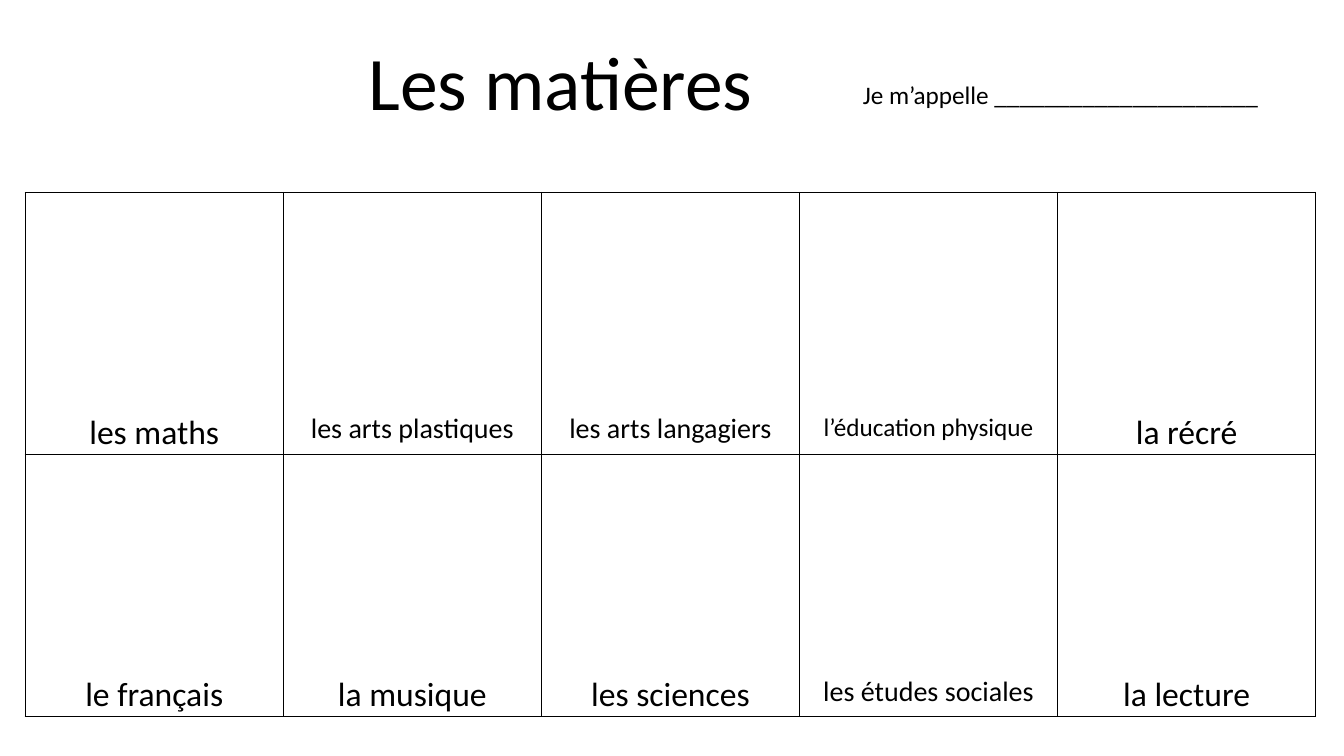
from lxml import etree
from pptx import Presentation
from pptx.dml.color import RGBColor
from pptx.enum.text import MSO_ANCHOR, PP_ALIGN
from pptx.oxml.ns import qn
from pptx.util import Inches, Pt

BLACK = RGBColor(0x00, 0x00, 0x00)
FONT = "Calibri"
SUBJECTS = [
    [("les maths", 24), ("les arts plastiques", 20), ("les arts langagiers", 20),
     ("l’éducation physique", 18), ("la récré", 24)],
    [("le français", 24), ("la musique", 24), ("les sciences", 24),
     ("les études sociales", 20), ("la lecture", 24)],
]
COLUMN_WIDTH = Inches(2.56)
ROW_HEIGHT = Inches(2.6)


def write(text_frame, text, size, alignment):
    text_frame.text = text
    paragraph = text_frame.paragraphs[0]
    paragraph.alignment = alignment
    font = paragraph.runs[0].font
    font.name = FONT
    font.size = Pt(size)
    font.color.rgb = BLACK
    return paragraph


def add_borders(cell):
    properties = cell._tc.get_or_add_tcPr()
    for position, side in enumerate(("a:lnL", "a:lnR", "a:lnT", "a:lnB")):
        line = etree.Element(qn(side), w=str(Pt(1)))
        fill = etree.SubElement(line, qn("a:solidFill"))
        etree.SubElement(fill, qn("a:srgbClr"), val=str(BLACK))
        properties.insert(position, line)


presentation = Presentation()
presentation.slide_width = Inches(13.33)
presentation.slide_height = Inches(7.5)
slide = presentation.slides.add_slide(presentation.slide_layouts[5])

title = slide.shapes.title
title.left, title.top = Inches(2.12), Inches(0.39)
title.width, title.height = Inches(6.88), Inches(0.92)
title.text_frame.vertical_anchor = MSO_ANCHOR.BOTTOM
heading = write(title.text_frame, "Les matières", 54, PP_ALIGN.CENTER)
heading.line_spacing = 0.9

name_box = slide.shapes.add_textbox(Inches(8.46), Inches(0.74), Inches(4.17), Inches(0.4))
name_box.text_frame.word_wrap = True
write(name_box.text_frame, "Je m’appelle _____________________", 18, PP_ALIGN.LEFT)

row_count, column_count = len(SUBJECTS), len(SUBJECTS[0])
table = slide.shapes.add_table(
    row_count, column_count, Inches(0.25), Inches(1.91),
    COLUMN_WIDTH * column_count, ROW_HEIGHT * row_count).table
table.first_row = False
table.horz_banding = False
for column in table.columns:
    column.width = COLUMN_WIDTH
for row, subjects in zip(table.rows, SUBJECTS):
    row.height = ROW_HEIGHT
    for cell, (subject, size) in zip(row.cells, subjects):
        # The space above each label is left free for a drawing.
        cell.margin_top = Inches(2.18)
        cell.margin_bottom = 0
        cell.vertical_anchor = MSO_ANCHOR.TOP
        cell.fill.background()
        add_borders(cell)
        write(cell.text_frame, subject, size, PP_ALIGN.CENTER)

presentation.save("out.pptx")
